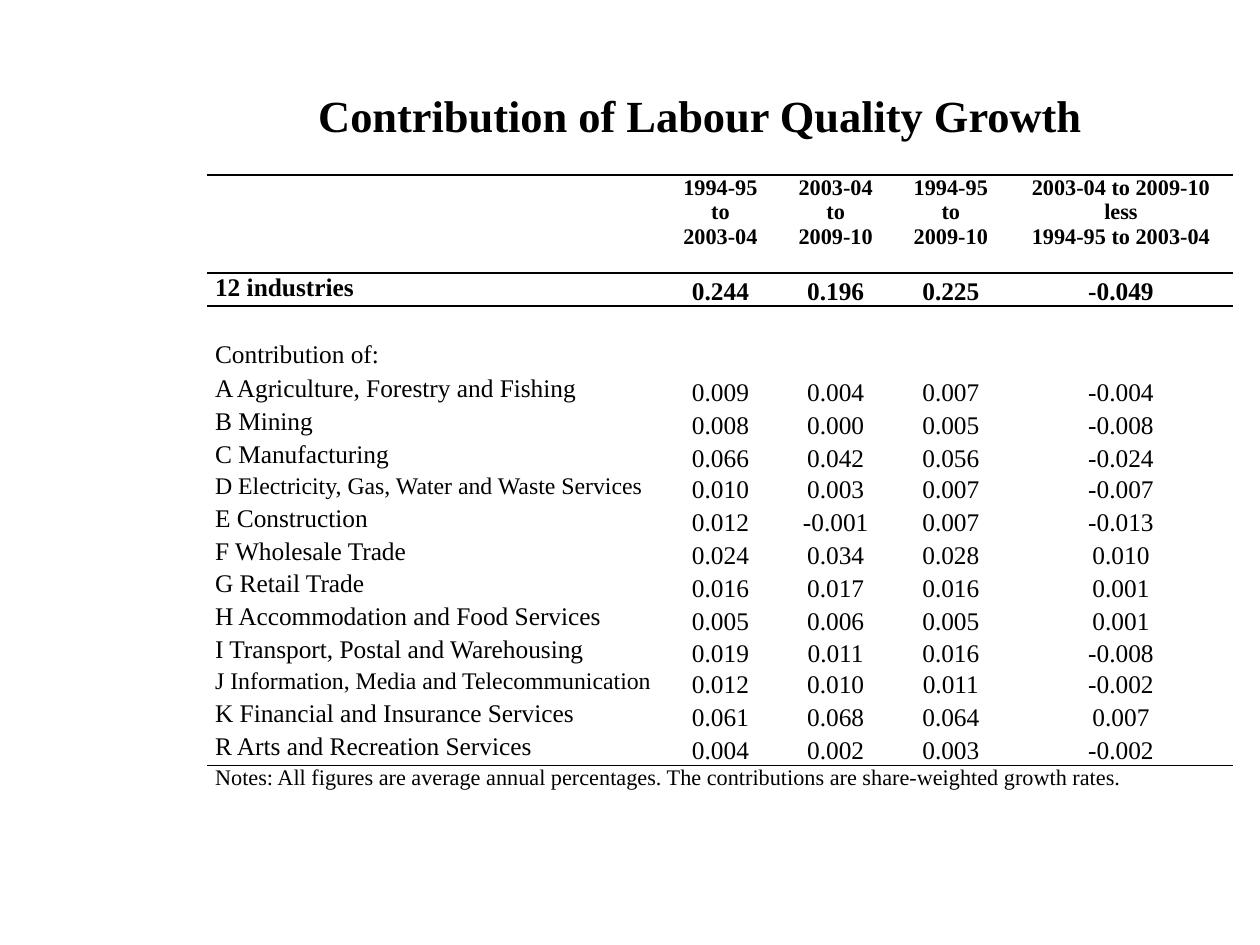
from pptx import Presentation
from pptx.dml.color import RGBColor
from pptx.enum.text import MSO_ANCHOR as Anchor, PP_ALIGN as Align
from pptx.oxml import parse_xml
from pptx.oxml.ns import nsdecls, qn
from pptx.util import Cm, Pt

BLACK = RGBColor(0x00, 0x00, 0x00)
WHITE = RGBColor(0xFF, 0xFF, 0xFF)
FONT = "Times New Roman"
NO_STYLE = "{2D5ABB26-0587-4C30-8999-92F81FD0307C}"

HEADINGS = [
    "",
    "1994-95\nto\n2003-04",
    "2003-04\nto\n2009-10",
    "1994-95\nto\n2009-10",
    "2003-04 to 2009-10\nless\n1994-95 to 2003-04",
]
TOTAL = ["12 industries", "0.244", "0.196", "0.225", "-0.049"]
INDUSTRIES = [
    ["A Agriculture, Forestry and Fishing", "0.009", "0.004", "0.007", "-0.004"],
    ["B Mining", "0.008", "0.000", "0.005", "-0.008"],
    ["C Manufacturing", "0.066", "0.042", "0.056", "-0.024"],
    ["D Electricity, Gas, Water and Waste Services", "0.010", "0.003", "0.007", "-0.007"],
    ["E Construction", "0.012", "-0.001", "0.007", "-0.013"],
    ["F Wholesale Trade", "0.024", "0.034", "0.028", "0.010"],
    ["G Retail Trade", "0.016", "0.017", "0.016", "0.001"],
    ["H Accommodation and Food Services", "0.005", "0.006", "0.005", "0.001"],
    ["I Transport, Postal and Warehousing", "0.019", "0.011", "0.016", "-0.008"],
    ["J Information, Media and Telecommunication", "0.012", "0.010", "0.011", "-0.002"],
    ["K Financial and Insurance Services", "0.061", "0.068", "0.064", "0.007"],
    ["R Arts and Recreation Services", "0.004", "0.002", "0.003", "-0.002"],
]
NOTES = ("Notes: All figures are average annual percentages. "
         "The contributions are share-weighted growth rates.")
COLUMN_WIDTHS = [10.13, 2.56, 2.56, 2.56, 5.0]
HEADER_HEIGHT, ROW_HEIGHT, LONG_ROW_HEIGHT = 2.18, 0.73, 0.69
LONG_LABEL = 40


class SlideBuilder:
    def __init__(self, slide, font, color):
        self.slide = slide
        self.font = font
        self.color = color

    def background(self, color):
        fill = self.slide.background.fill
        fill.solid()
        fill.fore_color.rgb = color

    def add_lines(self, frame, text, size, bold, align, spacing):
        for index, line in enumerate(text.split("\n")):
            paragraph = frame.paragraphs[0] if index == 0 else frame.add_paragraph()
            paragraph.alignment = align
            paragraph.line_spacing = spacing
            run = paragraph.add_run()
            run.text = line
            run.font.name = self.font
            run.font.size = Pt(size)
            run.font.bold = bold
            run.font.color.rgb = self.color

    def title(self, text, left, top, width, height):
        shape = self.slide.shapes.add_textbox(Cm(left), Cm(top), Cm(width), Cm(height))
        frame = shape.text_frame
        frame.word_wrap = True
        frame.margin_left = frame.margin_right = frame.margin_top = frame.margin_bottom = 0
        frame.vertical_anchor = Anchor.MIDDLE
        self.add_lines(frame, text, 28, True, Align.CENTER, 0.99)

    def table(self, left, top, widths, heights):
        frame = self.slide.shapes.add_table(
            len(heights), len(widths), Cm(left), Cm(top), Cm(sum(widths)), Cm(sum(heights)))
        next(frame._element.iter(qn("a:tableStyleId"))).text = NO_STYLE
        table = frame.table
        table.first_row = table.horz_banding = False
        for column, width in zip(table.columns, widths):
            column.width = Cm(width)
        for row, height in zip(table.rows, heights):
            row.height = Cm(height)
        return table

    def cell(self, cell, text, size, bold, align, anchor, borders):
        cell.margin_left = cell.margin_right = Cm(0.18)
        cell.margin_top = cell.margin_bottom = 0
        cell.vertical_anchor = anchor
        for side in borders:
            cell._tc.get_or_add_tcPr().append(parse_xml(
                f'<a:ln{side} {nsdecls("a")} w="{Pt(1)}"><a:solidFill>'
                f'<a:srgbClr val="{self.color}"/></a:solidFill></a:ln{side}>'))
        cell.fill.background()
        self.add_lines(cell.text_frame, text, size, bold, align, 1.01)


def main():
    presentation = Presentation()
    presentation.slide_width = Cm(28)
    presentation.slide_height = Cm(21)
    slide = presentation.slides.add_slide(presentation.slide_layouts[6])
    builder = SlideBuilder(slide, FONT, BLACK)
    builder.background(WHITE)
    builder.title("Contribution of Labour Quality Growth", 4.5, 0.84, 22.1, 3.5)

    rows = [HEADINGS, TOTAL, [""] * 5, ["Contribution of:"] + [""] * 4,
            *INDUSTRIES, [NOTES] + [""] * 4]
    last = len(rows) - 1
    borders = {0: "TB", 1: "T", last - 1: "B", last: "T"}
    long_rows = {index for index, row in enumerate(rows[:last]) if len(row[0]) > LONG_LABEL}
    heights = [HEADER_HEIGHT] + [
        LONG_ROW_HEIGHT if index in long_rows else ROW_HEIGHT for index in range(1, len(rows))]
    table = builder.table(4.6, 3.89, COLUMN_WIDTHS, heights)
    table.cell(last, 0).merge(table.cell(last, len(COLUMN_WIDTHS) - 1))

    for row_index, row in enumerate(rows):
        for column_index, text in enumerate(row):
            is_label = column_index == 0
            if row_index in (0, last):
                size = 14
            else:
                size = 15 if is_label and row_index in long_rows else 16
            builder.cell(
                table.cell(row_index, column_index), text, size,
                bold=row_index < 2,
                align=Align.LEFT if is_label else Align.CENTER,
                anchor=Anchor.TOP if is_label or row_index == 0 else Anchor.BOTTOM,
                borders=borders.get(row_index, ""))

    presentation.save("out.pptx")


if __name__ == "__main__":
    main()
